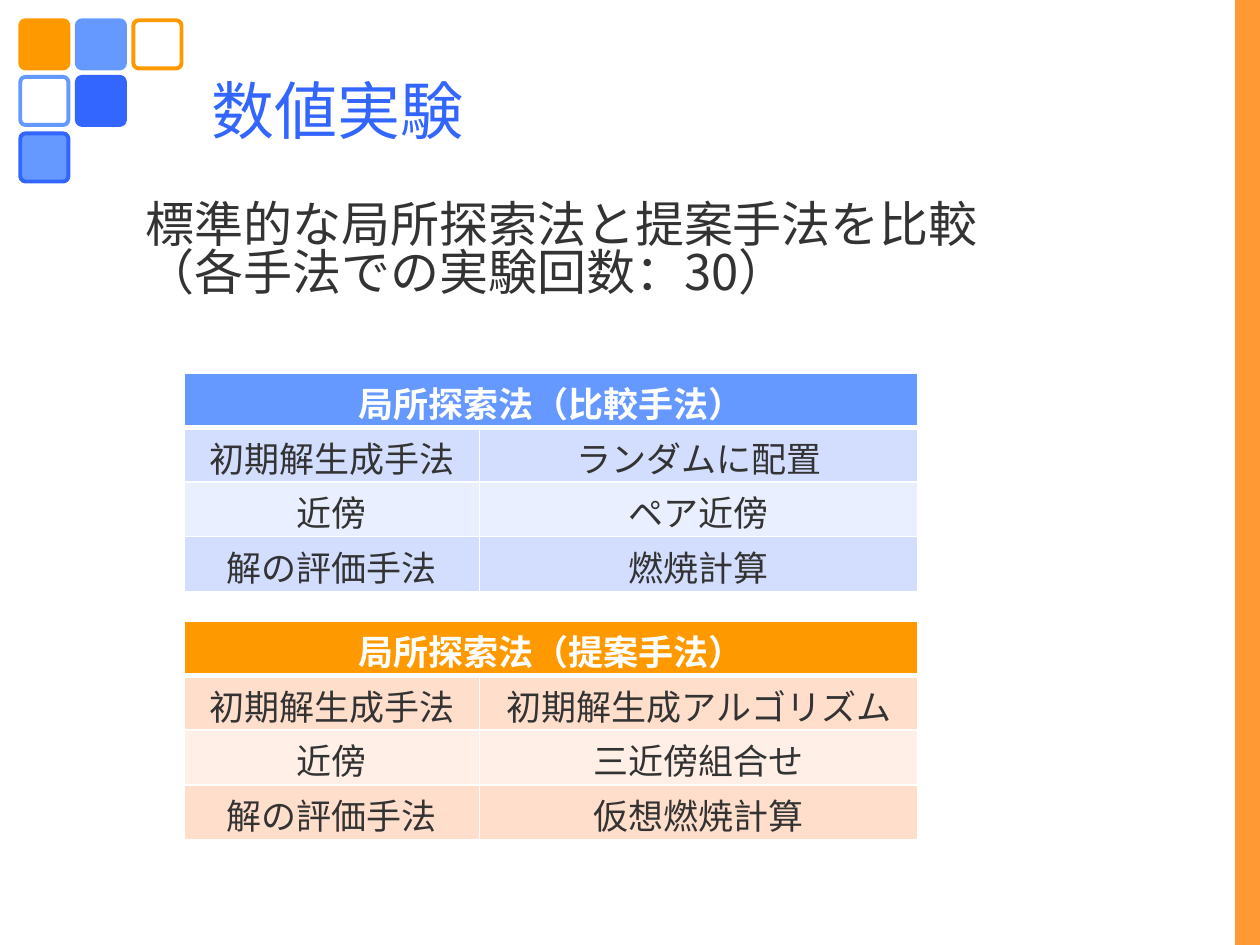
from dataclasses import dataclass

from lxml.etree import SubElement
from pptx import Presentation
from pptx.dml.color import RGBColor
from pptx.enum.shapes import MSO_SHAPE as Preset
from pptx.enum.text import MSO_ANCHOR as Anchor, PP_ALIGN as Align
from pptx.oxml.ns import qn
from pptx.util import Cm, Pt


@dataclass(frozen=True)
class Theme:
    white: str = "FFFFFF"
    text: str = "333333"
    blue: str = "3366FF"
    light_blue: str = "6699FF"
    orange: str = "FF9900"
    bar: str = "FF9933"
    blue_bands: tuple = ("D3DEFF", "EAEFFF")
    orange_bands: tuple = ("FFDECC", "FFEFE7")
    title_font: str = "Calibri"
    body_font: str = "Noto Sans CJK JP"
    table_font: str = "Times New Roman"
    title_size: int = 36
    body_size: int = 28
    table_size: int = 20


THEME = Theme()


def add_run(paragraph, text, font, size, color, bold=False):
    run = paragraph.add_run()
    run.text = text
    run.font.name = font
    run.font.size = Pt(size)
    run.font.bold = bold
    run.font.color.rgb = RGBColor.from_string(color)
    east_asian = SubElement(run._r.get_or_add_rPr(), qn("a:ea"))
    east_asian.set("typeface", THEME.body_font)


def add_block(slide, preset, box, fill, line, width):
    shape = slide.shapes.add_shape(preset, *map(Cm, box))
    shape.shadow.inherit = False
    shape.fill.solid()
    shape.fill.fore_color.rgb = RGBColor.from_string(fill)
    shape.line.color.rgb = RGBColor.from_string(line)
    shape.line.width = Pt(width)
    return shape


def add_corner_squares(slide, left, top, size, pitch):
    rows = [
        [(THEME.orange, THEME.orange), (THEME.light_blue, THEME.light_blue),
         (THEME.white, THEME.orange)],
        [(THEME.white, THEME.light_blue), (THEME.blue, THEME.blue)],
        [(THEME.light_blue, THEME.blue)],
    ]
    for row, squares in enumerate(rows):
        for column, (fill, line) in enumerate(squares):
            box = (left + column * pitch, top + row * pitch, size, size)
            square = add_block(slide, Preset.ROUNDED_RECTANGLE, box, fill, line, 2.25)
            square.adjustments[0] = 0.11


def add_text(slide, box, lines, font, size, color, anchor=Anchor.TOP, spacing=1.0):
    frame = slide.shapes.add_textbox(*map(Cm, box)).text_frame
    frame.word_wrap = True
    frame.vertical_anchor = anchor
    for index, line in enumerate(lines):
        paragraph = frame.paragraphs[0] if index == 0 else frame.add_paragraph()
        paragraph.line_spacing = spacing
        add_run(paragraph, line, font, size, color)


def set_borders(cell, bottom_width):
    properties = cell._tc.get_or_add_tcPr()
    widths = {"a:lnL": 1, "a:lnR": 1, "a:lnT": 1, "a:lnB": bottom_width}
    for index, (tag, width) in enumerate(widths.items()):
        border = SubElement(properties, qn(tag), w=str(Pt(width)))
        fill = SubElement(border, qn("a:solidFill"))
        SubElement(fill, qn("a:srgbClr"), val=THEME.white)
        properties.insert(index, border)


def fill_cell(cell, text, fill, color, bold=False, bottom_width=1):
    cell.fill.solid()
    cell.fill.fore_color.rgb = RGBColor.from_string(fill)
    cell.margin_top = Cm(0.08)
    cell.margin_bottom = 0
    set_borders(cell, bottom_width)
    if text:
        paragraph = cell.text_frame.paragraphs[0]
        paragraph.alignment = Align.CENTER
        add_run(paragraph, text, THEME.table_font, THEME.table_size, color, bold)


def add_method_table(slide, left, top, widths, row_height, heading, entries, head_fill, bands):
    row_count = len(entries) + 1
    table = slide.shapes.add_table(
        row_count, len(widths), Cm(left), Cm(top),
        Cm(sum(widths)), Cm(row_height * row_count)).table
    for column, width in zip(table.columns, widths):
        column.width = Cm(width)
    for row in table.rows:
        row.height = Cm(row_height)
    table.cell(0, 0).merge(table.cell(0, 1))
    for column, text in enumerate((heading, "")):
        fill_cell(table.cell(0, column), text, head_fill, THEME.white, True, 3)
    for row, entry in enumerate(entries):
        for column, text in enumerate(entry):
            fill_cell(table.cell(row + 1, column), text, bands[row % 2], THEME.text)


def add_method_tables(slide, left, top, pitch):
    labels = ("初期解生成手法", "近傍", "解の評価手法")
    methods = [
        ("局所探索法（比較手法）", ("ランダムに配置", "ペア近傍", "燃焼計算"),
         THEME.light_blue, THEME.blue_bands),
        ("局所探索法（提案手法）", ("初期解生成アルゴリズム", "三近傍組合せ", "仮想燃焼計算"),
         THEME.orange, THEME.orange_bands),
    ]
    for index, (heading, values, head_fill, bands) in enumerate(methods):
        add_method_table(slide, left, top + index * pitch, (5.96, 8.84), 1.1,
                         heading, list(zip(labels, values)), head_fill, bands)


def main():
    presentation = Presentation()
    presentation.slide_width = Cm(25.4)
    presentation.slide_height = Cm(19.05)
    slide = presentation.slides.add_slide(presentation.slide_layouts[6])
    add_corner_squares(slide, 0.41, 0.41, 0.97, 1.14)
    add_block(slide, Preset.RECTANGLE, (24.9, 0, 0.5, 19.05), THEME.bar, THEME.bar, 0.75)
    add_text(slide, (4.01, 0.84, 19.48, 2.74), ["数値実験"],
             THEME.title_font, THEME.title_size, THEME.blue, Anchor.MIDDLE)
    add_text(slide, (2.69, 3.99, 18.8, 2.64),
             ["標準的な局所探索法と提案手法を比較", "（各手法での実験回数：30）"],
             THEME.body_font, THEME.body_size, THEME.text, spacing=0.82)
    add_method_tables(slide, 3.71, 7.52, 5.0)
    presentation.save("out.pptx")


if __name__ == "__main__":
    main()
